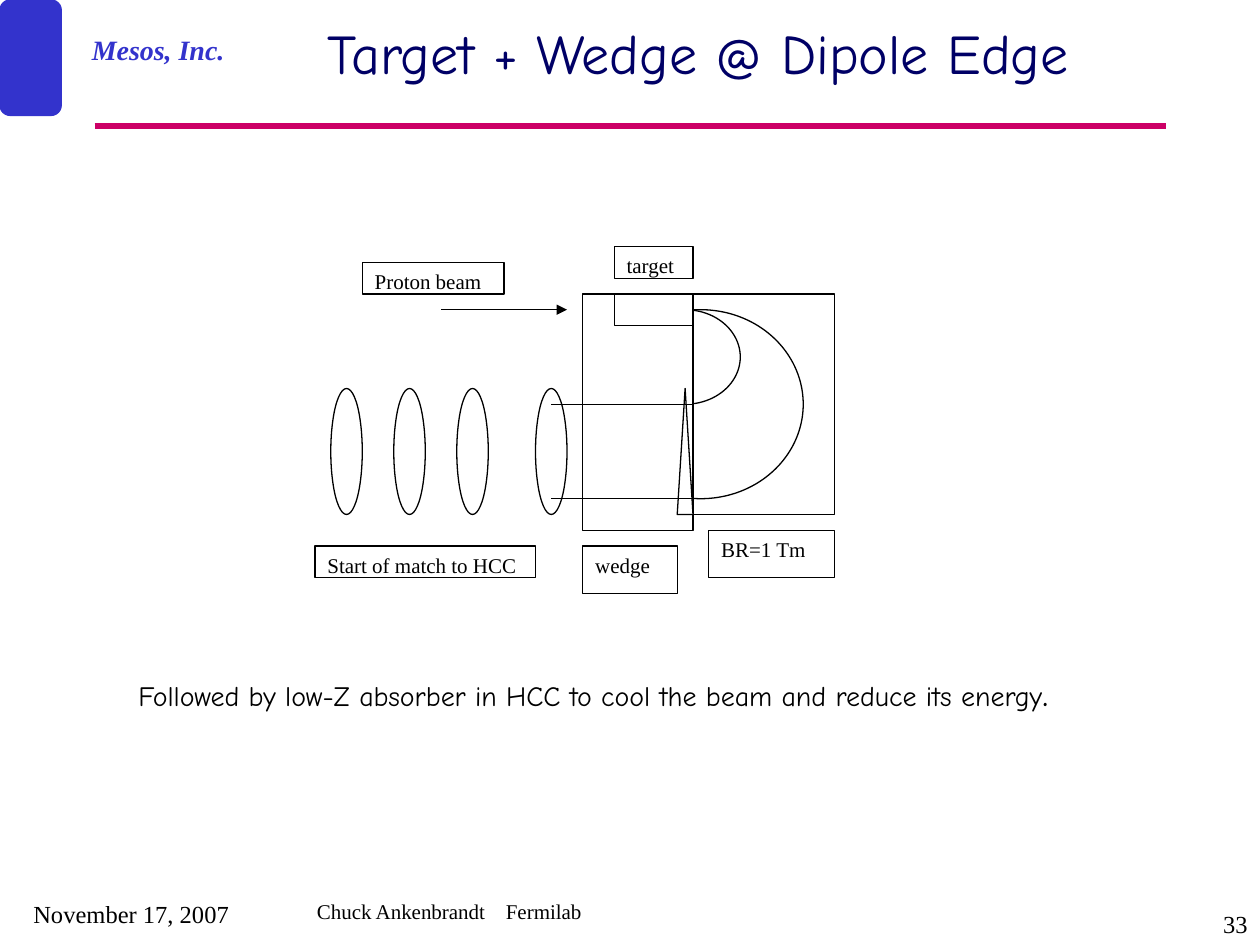
from dataclasses import dataclass
from typing import NamedTuple

from pptx import Presentation
from pptx import util as u
from pptx.dml.color import RGBColor
from pptx.enum import shapes, text
from pptx.oxml.ns import qn
from lxml import etree

KIND = shapes.MSO_SHAPE
ALIGN = text.PP_ALIGN


@dataclass(frozen=True)
class Theme:
    ink: str = "000000"
    paper: str = "FFFFFF"
    navy: str = "000066"
    blue: str = "3333CC"
    rule: str = "CC0066"
    serif: str = "Times New Roman"
    hand: str = "Comic Neue"
    head: int = 32
    note: int = 16
    foot: int = 14
    label: int = 12
    thin: float = 0.75
    thick: float = 3


T = Theme()


class Box(NamedTuple):
    left: float
    top: float
    width: float
    height: float


class Part(NamedTuple):
    kind: int
    box: Box
    label: str = ""


class Beam(NamedTuple):
    start: float
    end: float
    top: float
    arrow: bool = False


class Line(NamedTuple):
    box: Box
    words: tuple
    style: dict
    align: int = ALIGN.LEFT


def pts(vals) -> list:
    return [u.Pt(val) for val in vals]


def tint(code: str) -> RGBColor:
    return RGBColor.from_string(code)


def face(name: str, size: int, color: str, **more) -> dict:
    return dict(name=name, size=u.Pt(size), color=color, **more)


def style(font, form: dict) -> None:
    for key, val in form.items():
        if key == "color":
            font.color.rgb = tint(val)
        else:
            setattr(font, key, val)


def write(frame, words: tuple, form: dict, align: int = ALIGN.LEFT) -> None:
    """Fill the first paragraph; each word group is (text, extra format)."""
    frame.word_wrap = True
    para = frame.paragraphs[0]
    para.alignment = align
    for body, more in words:
        run = para.add_run()
        run.text = body
        style(run.font, form | more)


def draw_part(slide, part: Part, fill: str = T.paper, edge: str = T.ink) -> None:
    shape = slide.shapes.add_shape(part.kind, *pts(part.box))
    shape.shadow.inherit = False
    shape.fill.solid()
    shape.fill.fore_color.rgb = tint(fill)
    shape.line.color.rgb = tint(edge)
    shape.line.width = u.Pt(T.thin)
    if part.label:
        shape.text_frame.vertical_anchor = text.MSO_ANCHOR.TOP
        write(shape.text_frame, ((part.label, {}),), face(T.serif, T.label, T.ink))


def draw_beam(slide, beam: Beam, color: str = T.ink, width: float = T.thin) -> None:
    ends = pts((beam.start, beam.top, beam.end, beam.top))
    link = slide.shapes.add_connector(shapes.MSO_CONNECTOR.STRAIGHT, *ends)
    link.line.color.rgb = tint(color)
    link.line.width = u.Pt(width)
    if beam.arrow:
        etree.SubElement(link.line._get_or_add_ln(), qn("a:tailEnd"), type="triangle")
    etree.SubElement(link._element.spPr, qn("a:effectLst"))


def draw_line(slide, line: Line) -> None:
    box = slide.shapes.add_textbox(*pts(line.box))
    write(box.text_frame, line.words, line.style, line.align)


def draw_title(slide, words: str, box: Box) -> None:
    title = slide.shapes.title
    for key, val in zip(Box._fields, pts(box)):
        setattr(title, key, val)
    title.text_frame.vertical_anchor = text.MSO_ANCHOR.MIDDLE
    write(title.text_frame, ((words, {}),), face(T.hand, T.head, T.navy), ALIGN.CENTER)


# Axis of the target, the dipole edge, and the two bend exits
AXIS, EDGE, HIGH, LOW = 177, 396, 231, 285
LENS = [Part(KIND.OVAL, Box(x, 222, 18, 72)) for x in (306, 261, 225, 189)]
DIAGRAM = [
    Part(KIND.RECTANGLE, Box(EDGE, 168, 81, 126)),
    Part(KIND.OVAL, Box(342, AXIS, 117, LOW - AXIS)),
    Beam(252, 324, AXIS, True),
    Part(KIND.RECTANGLE, Box(207, 150, 81, 18), "Proton beam"),
    Part(KIND.RECTANGLE, Box(351, 141, 45, 18), "target"),
    *LENS,
    Part(KIND.RECTANGLE, Box(405, 303, 72, 27), "BR=1 Tm"),
    Part(KIND.OVAL, Box(360, AXIS, 63, HIGH - AXIS)),
    Part(KIND.RECTANGLE, Box(333, 168, 63, 135)),
    Part(KIND.ISOSCELES_TRIANGLE, Box(387, 222, 9, 72)),
    Beam(315, EDGE, HIGH),
    Beam(315, EDGE, LOW),
    Part(KIND.RECTANGLE, Box(351, 168, 45, 18)),
    Part(KIND.RECTANGLE, Box(333, 312, 54, 27), "wedge"),
    Part(KIND.RECTANGLE, Box(180, 312, 126, 18), "Start of match to HCC"),
]

FOOT = face(T.serif, T.foot, T.ink)
LINES = [
    Line(Box(45.4, 15, 105, 27), (("Mesos, Inc.", {}),),
         face(T.serif, T.note, T.blue, bold=True, italic=True)),
    Line(Box(0, 510, 150, 30), (("November 17, 2007", {}),), FOOT, ALIGN.CENTER),
    Line(Box(570, 516, 150, 24), (("33", {}),), FOOT, ALIGN.RIGHT),
    Line(Box(174, 510, 396, 30), (("Chuck Ankenbrandt\tFermilab", {}),),
         face(T.serif, T.label, T.ink)),
    Line(Box(72, 384, 582, 27),
         (("Followed by low-Z absorber in HCC to cool the beam and reduce its energy", {}),
          (".", {"bold": True})),
         face(T.hand, T.note, T.ink)),
]


def main() -> None:
    deck = Presentation()
    deck.slide_width, deck.slide_height = pts((720, 540))
    slide = deck.slides.add_slide(deck.slide_layouts[5])
    draw_title(slide, "Target + Wedge @ Dipole Edge", Box(138, 0, 522, 60))
    draw_beam(slide, Beam(54, 666, 72), T.rule, T.thick)
    draw_part(slide, Part(KIND.ROUNDED_RECTANGLE, Box(0, 0, 35, 66)), T.blue, T.blue)
    for item in DIAGRAM:
        draw = draw_beam if isinstance(item, Beam) else draw_part
        draw(slide, item)
    for line in LINES:
        draw_line(slide, line)
    deck.save("out.pptx")


if __name__ == "__main__":
    main()
